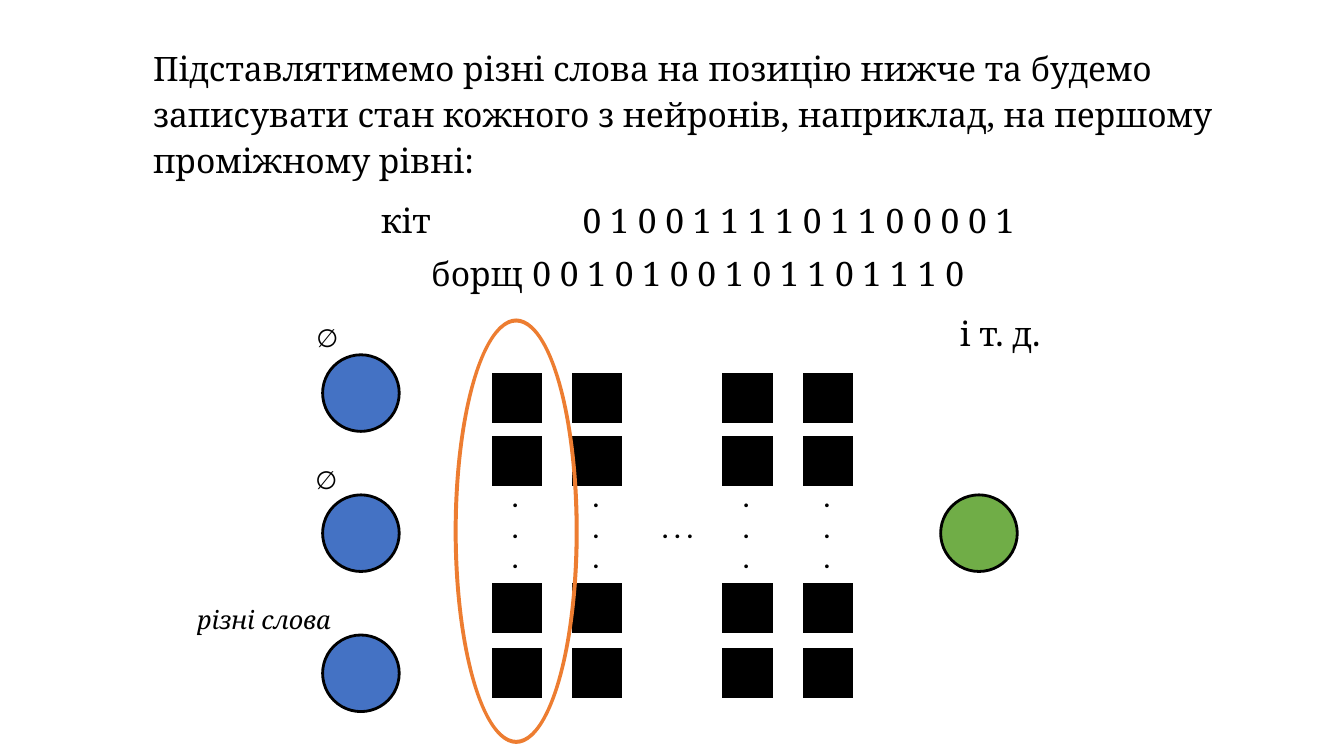
from dataclasses import dataclass

from lxml import etree
from pptx import Presentation
from pptx import util as u
from pptx.dml.color import RGBColor
from pptx.enum import shapes, text
from pptx.oxml import ns


@dataclass(frozen=True)
class Theme:
    ink: str = "000000"
    input: str = "4472C4"
    output: str = "70AD47"
    accent: str = "ED7D31"
    serif: str = "Noto Serif"
    sans: str = "Calibri"
    body_size: int = 24
    label_size: int = 18
    outline: int = 2


THEME = Theme()
NEURON = 0.76
CELL = 0.47


def color(value):
    return RGBColor.from_string(value)


def write(paragraph, content, font=THEME.serif, size=THEME.label_size,
          bold=False, italic=False, align=text.PP_ALIGN.LEFT,
          indent=0, spacing=1.0, before=0, after=0):
    paragraph.text = content
    paragraph.alignment = align
    paragraph.line_spacing = spacing
    paragraph.space_before = u.Pt(before)
    paragraph.space_after = u.Pt(after)
    properties = paragraph._p.get_or_add_pPr()
    properties.set("marL", str(u.Inches(indent)))
    properties.set("indent", "0")
    properties.set("defTabSz", str(u.Inches(1)))
    for run in paragraph.runs:
        run.font.name = font
        run.font.size = u.Pt(size)
        run.font.bold = bold
        run.font.italic = italic
        run.font.color.rgb = color(THEME.ink)


def add_frame(slide, left, top, width, height, wrap=False):
    box = slide.shapes.add_textbox(*map(u.Inches, (left, top, width, height)))
    box.text_frame.word_wrap = wrap
    return box.text_frame


def add_figure(slide, kind, left, top, width, height, fill, outlined=True):
    shape = slide.shapes.add_shape(
        kind, *map(u.Inches, (left, top, width, height)))
    shape.shadow.inherit = False
    shape.fill.solid()
    shape.fill.fore_color.rgb = color(fill)
    if outlined:
        shape.line.color.rgb = color(THEME.ink)
        shape.line.width = u.Pt(THEME.outline)
        outline = shape.line._get_or_add_ln()
        etree.SubElement(outline, ns.qn("a:miter"), lim="800000")
    else:
        shape.line.fill.background()
    return shape


def add_neuron(slide, left, top, fill):
    add_figure(slide, shapes.MSO_SHAPE.OVAL, left, top, NEURON, NEURON, fill)


def add_inputs(slide, left, top, pitch):
    labels = (("∅", 0.2, -0.37, False),
              ("∅", 0.19, -0.35, False),
              ("різні слова", 0.18, -0.35, True))
    for row, (label, right, rise, italic) in enumerate(labels):
        neuron_top = top + row * pitch
        add_neuron(slide, left, neuron_top, THEME.input)
        width = 1.59 if italic else 0.36
        frame = add_frame(slide, left + right - width, neuron_top + rise,
                          width, 0.4)
        write(frame.paragraphs[0], label, italic=italic,
              align=text.PP_ALIGN.RIGHT)


def add_layer(slide, left, top):
    for offset in (0, 0.63, 2.09, 2.73):
        add_figure(slide, shapes.MSO_SHAPE.RECTANGLE, left, top + offset,
                   CELL, CELL, THEME.ink)
    frame = add_frame(slide, left + 0.09, top + 1.03, 0.27, 1.01)
    write(frame.paragraphs[0], ".\v.\v.", font=THEME.sans, bold=True)


def add_hidden_layers(slide, left, top):
    for offset in (0, 0.8, 2.29, 3.09):
        add_layer(slide, left + offset, top)
    frame = add_frame(slide, left + 1.57, top + 1.03, 0.52, 1.01)
    frame.vertical_anchor = text.MSO_ANCHOR.MIDDLE
    write(frame.paragraphs[0], ". . .", font=THEME.sans, bold=True,
          align=text.PP_ALIGN.CENTER)


def add_explanation(slide, left, top, width, height):
    frame = add_frame(slide, left, top, width, height, wrap=True)
    center = text.PP_ALIGN.CENTER
    lines = (
        ("Підставлятимемо різні слова на позицію нижче та будемо записувати "
         "стан кожного з нейронів, наприклад, на першому проміжному рівні:",
         text.PP_ALIGN.LEFT, 5),
        ("кіт\t\t0 1 0 0 1 1 1 1 0 1 1 0 0 0 0 1", center, 0),
        ("борщ\t0 0 1 0 1 0 0 1 0 1 1 0 1 1 1 0", center, 5),
        ("\t\t\t\t\t\tі т. д.", center, 5),
    )
    for index, (content, align, after) in enumerate(lines):
        paragraph = frame.add_paragraph() if index else frame.paragraphs[0]
        write(paragraph, content, size=THEME.body_size, align=align,
              indent=0.5, spacing=1.14, before=5, after=after)


def add_highlight(slide, left, top, width, height):
    ring = add_figure(slide, shapes.MSO_SHAPE.DONUT, left, top, width, height,
                      THEME.accent, outlined=False)
    ring.adjustments[0] = 0.032


def build_network_slide(presentation):
    slide = presentation.slides.add_slide(presentation.slide_layouts[6])
    add_inputs(slide, 3.2, 3.52, 1.39)
    add_hidden_layers(slide, 4.89, 3.71)
    add_neuron(slide, 9.33, 4.91, THEME.output)
    add_explanation(slide, 0.92, 0.37, 11.5, 5.1)
    add_highlight(slide, 4.5, 3.16, 1.24, 4.22)


def main():
    presentation = Presentation()
    presentation.slide_width = u.Inches(13.33)
    presentation.slide_height = u.Inches(7.5)
    build_network_slide(presentation)
    presentation.save("out.pptx")


if __name__ == "__main__":
    main()
